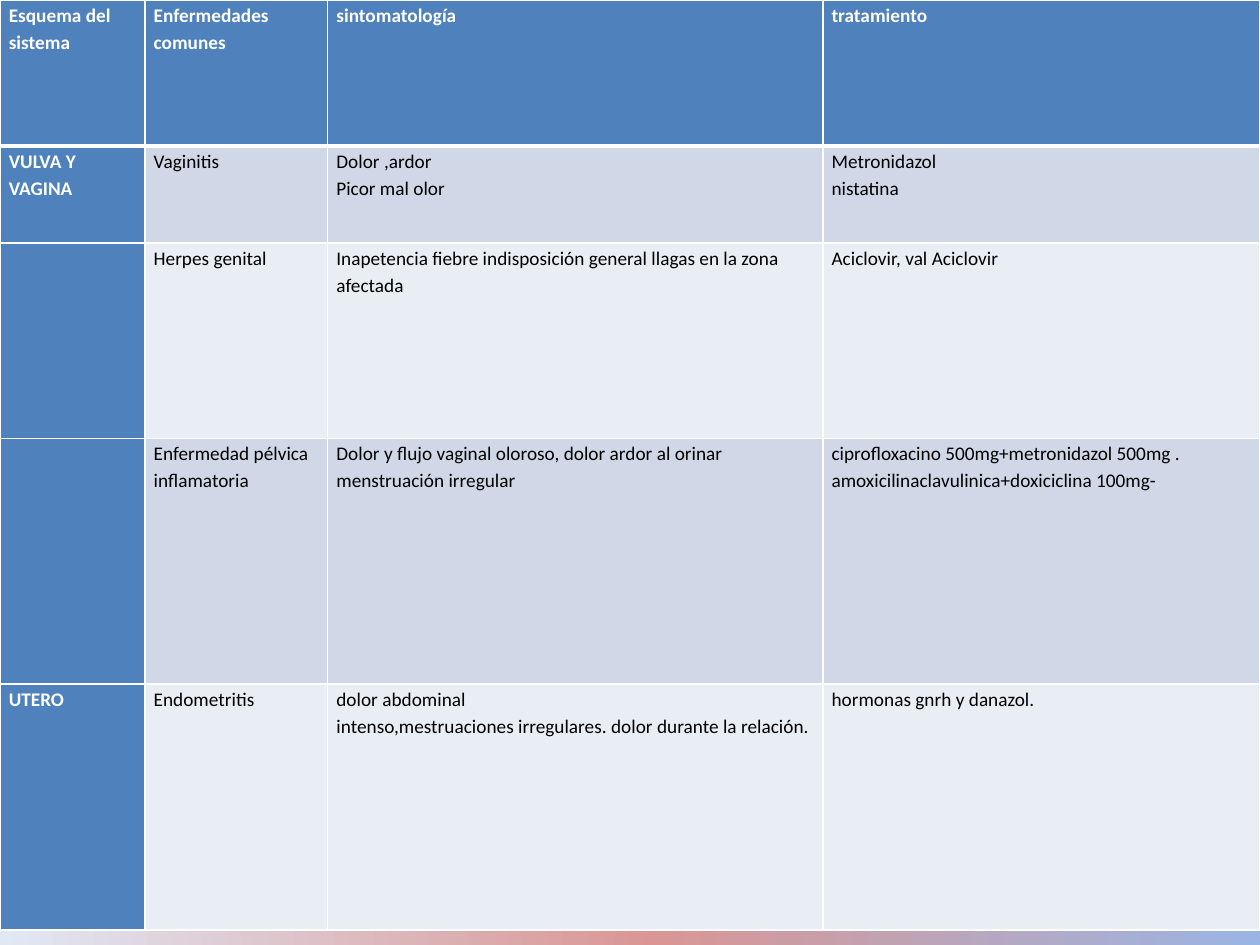
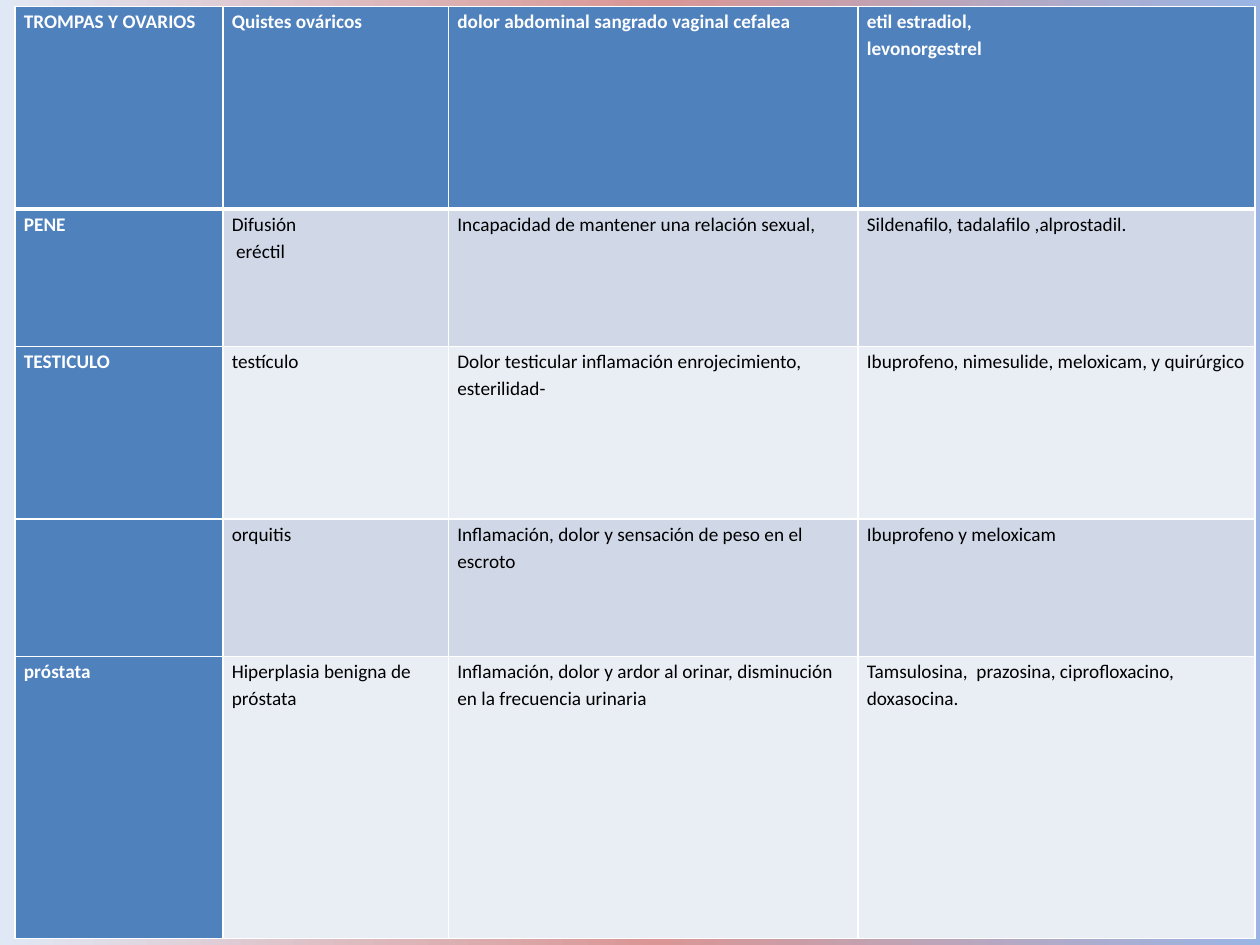
from dataclasses import dataclass

from lxml import etree
from pptx import Presentation
from pptx.dml.color import RGBColor
from pptx.oxml.ns import qn
from pptx.util import Inches, Pt

# Shared look
FONT = "Calibri"
SIZE = 11
WHITE, BLACK = "FFFFFF", "000000"
BLUE = "4F81BD"
BANDS = ("E9EDF4", "D0D8E8")
STOPS = ((0, "9AB5E4"), (48, "D99694"), (100, "E1E8F5"))
THIN, THICK = 1, 3


@dataclass
class Grid:
    left: float
    top: float
    cols: tuple[float, ...]
    rows: tuple[float, ...]
    cells: tuple[tuple[str, ...], ...]


# Content: one grid per slide
FEMALE = Grid(
    0, 0, (1.15, 1.45, 3.93, 3.47), (1.16, 0.77, 1.55, 1.95, 1.95),
    (
        ("Esquema del sistema", "Enfermedades comunes", "sintomatología",
         "tratamiento"),
        ("VULVA Y VAGINA", "Vaginitis", "Dolor ,ardor\nPicor mal olor",
         "Metronidazol\nnistatina"),
        ("", "Herpes genital",
         "Inapetencia fiebre indisposición general llagas en la zona afectada",
         "Aciclovir, val Aciclovir"),
        ("", "Enfermedad pélvica inflamatoria",
         "Dolor y flujo vaginal oloroso, dolor ardor al orinar "
         "menstruación irregular",
         "ciprofloxacino 500mg+metronidazol 500mg .\n"
         "amoxicilinaclavulinica+doxiciclina 100mg-"),
        ("UTERO", "Endometritis",
         "dolor abdominal\n"
         "intenso,mestruaciones irregulares. dolor durante la relación.",
         "hormonas gnrh y danazol."),
    ),
)
MALE = Grid(
    0.12, 0.05, (1.65, 1.79, 3.25, 3.15), (1.61, 1.09, 1.37, 1.09, 2.24),
    (
        ("TROMPAS Y OVARIOS", "Quistes ováricos",
         "dolor abdominal sangrado vaginal cefalea",
         "etil estradiol,\nlevonorgestrel"),
        ("PENE", "Difusión\n eréctil",
         "Incapacidad de mantener una relación sexual,",
         "Sildenafilo, tadalafilo ,alprostadil."),
        ("TESTICULO", "testículo",
         "Dolor testicular inflamación enrojecimiento, esterilidad-",
         "Ibuprofeno, nimesulide, meloxicam, y quirúrgico"),
        ("", "orquitis", "Inflamación, dolor y sensación de peso en el escroto",
         "Ibuprofeno y meloxicam"),
        ("próstata", "Hiperplasia benigna de próstata",
         "Inflamación, dolor y ardor al orinar, disminución "
         "en la frecuencia urinaria",
         "Tamsulosina,  prazosina, ciprofloxacino, doxasocina."),
    ),
)


def color(code: str) -> RGBColor:
    return RGBColor.from_string(code)


def shade(master) -> None:
    """Give every slide the three-stop background."""
    fill = master.background.fill
    fill.gradient()
    fill.gradient_angle = 180
    stops = next(master.element.cSld.iter(qn("a:gsLst")))
    for old in list(stops):
        stops.remove(old)
    for place, code in STOPS:
        stop = etree.SubElement(stops, qn("a:gs"), pos=str(place * 1000))
        etree.SubElement(stop, qn("a:srgbClr"), val=code)


def edge(cell, row: int) -> None:
    """Draw white borders, with a thick rule under the header."""
    props = cell._tc.get_or_add_tcPr()
    top = THICK if row == 1 else THIN
    base = THICK if row == 0 else THIN
    for side, width in (("L", THIN), ("R", THIN), ("T", top), ("B", base)):
        line = etree.SubElement(props, qn(f"a:ln{side}"), w=str(Pt(width)))
        solid = etree.SubElement(line, qn("a:solidFill"))
        etree.SubElement(solid, qn("a:srgbClr"), val=WHITE)


def write(cell, words: str, head: bool) -> None:
    cell.margin_left = cell.margin_right = Inches(0.07)
    cell.margin_top = cell.margin_bottom = 0
    cell.text_frame.text = words
    for para in cell.text_frame.paragraphs:
        para.line_spacing = 1.15
        for run in para.runs:
            font = run.font
            font.name, font.size, font.bold = FONT, Pt(SIZE), head
            font.color.rgb = color(WHITE if head else BLACK)


def draw(slide, grid: Grid) -> None:
    table = slide.shapes.add_table(
        len(grid.rows), len(grid.cols), Inches(grid.left), Inches(grid.top),
        Inches(sum(grid.cols)), Inches(sum(grid.rows))).table
    table.first_col = True
    for col, width in zip(table.columns, grid.cols):
        col.width = Inches(width)
    for row, height in zip(table.rows, grid.rows):
        row.height = Inches(height)
    for r, line in enumerate(grid.cells):
        for c, words in enumerate(line):
            cell = table.cell(r, c)
            head = r == 0 or c == 0
            edge(cell, r)
            cell.fill.solid()
            cell.fill.fore_color.rgb = color(BLUE if head else BANDS[r % 2])
            write(cell, words, head)


def main() -> None:
    deck = Presentation()
    deck.slide_width, deck.slide_height = Inches(10), Inches(7.5)
    shade(deck.slide_master)
    for grid in (FEMALE, MALE):
        draw(deck.slides.add_slide(deck.slide_layouts[6]), grid)
    deck.save("out.pptx")


if __name__ == "__main__":
    main()
